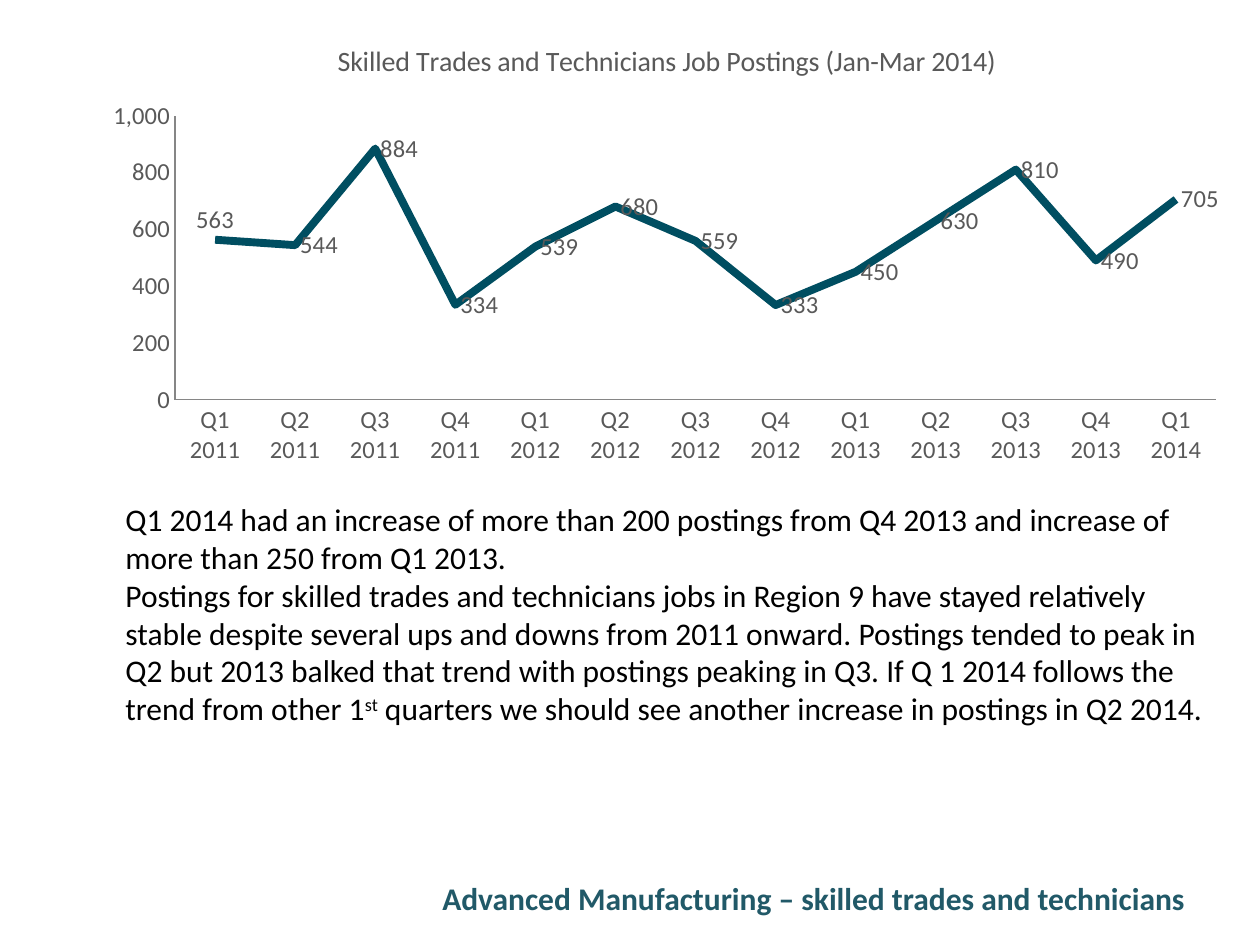
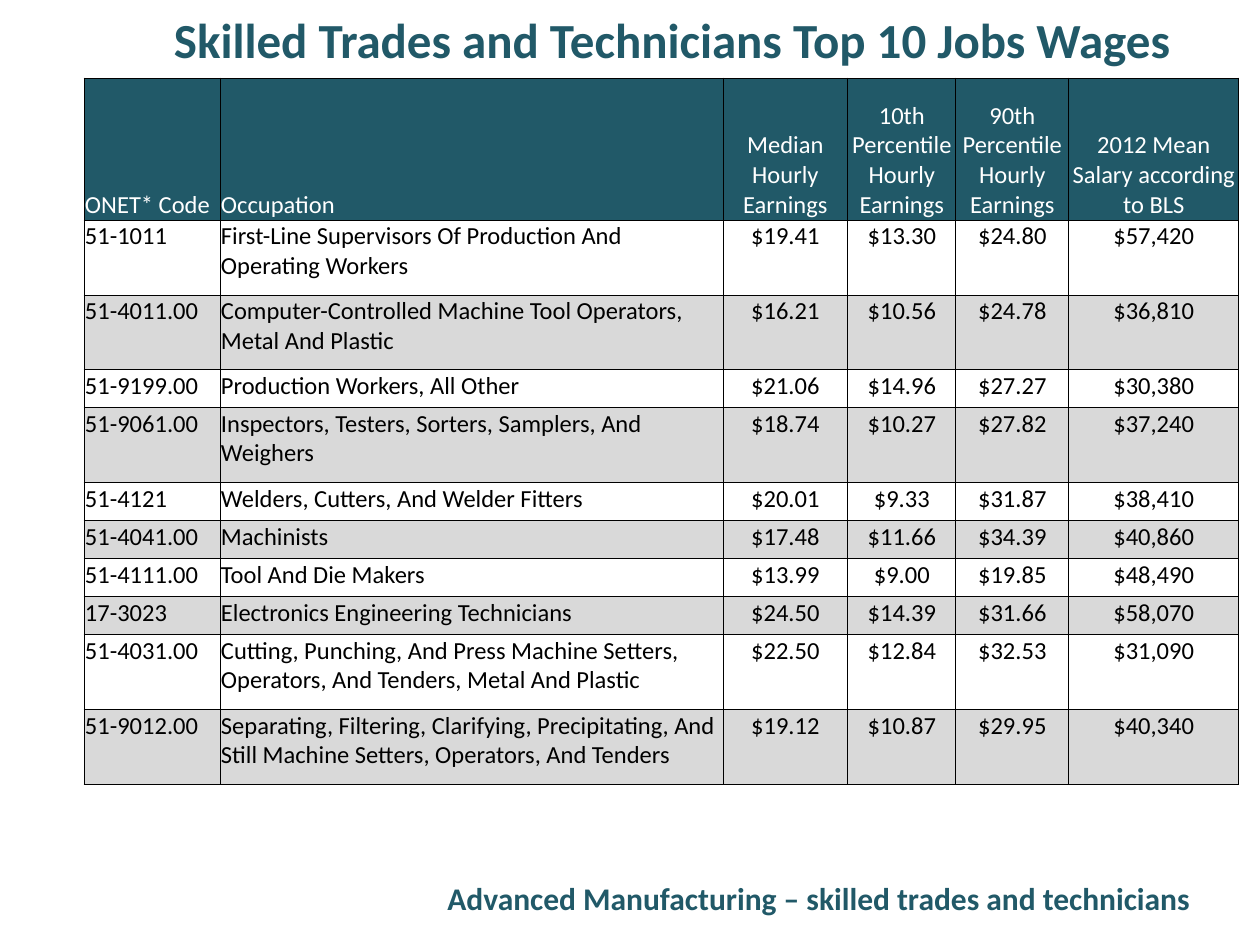
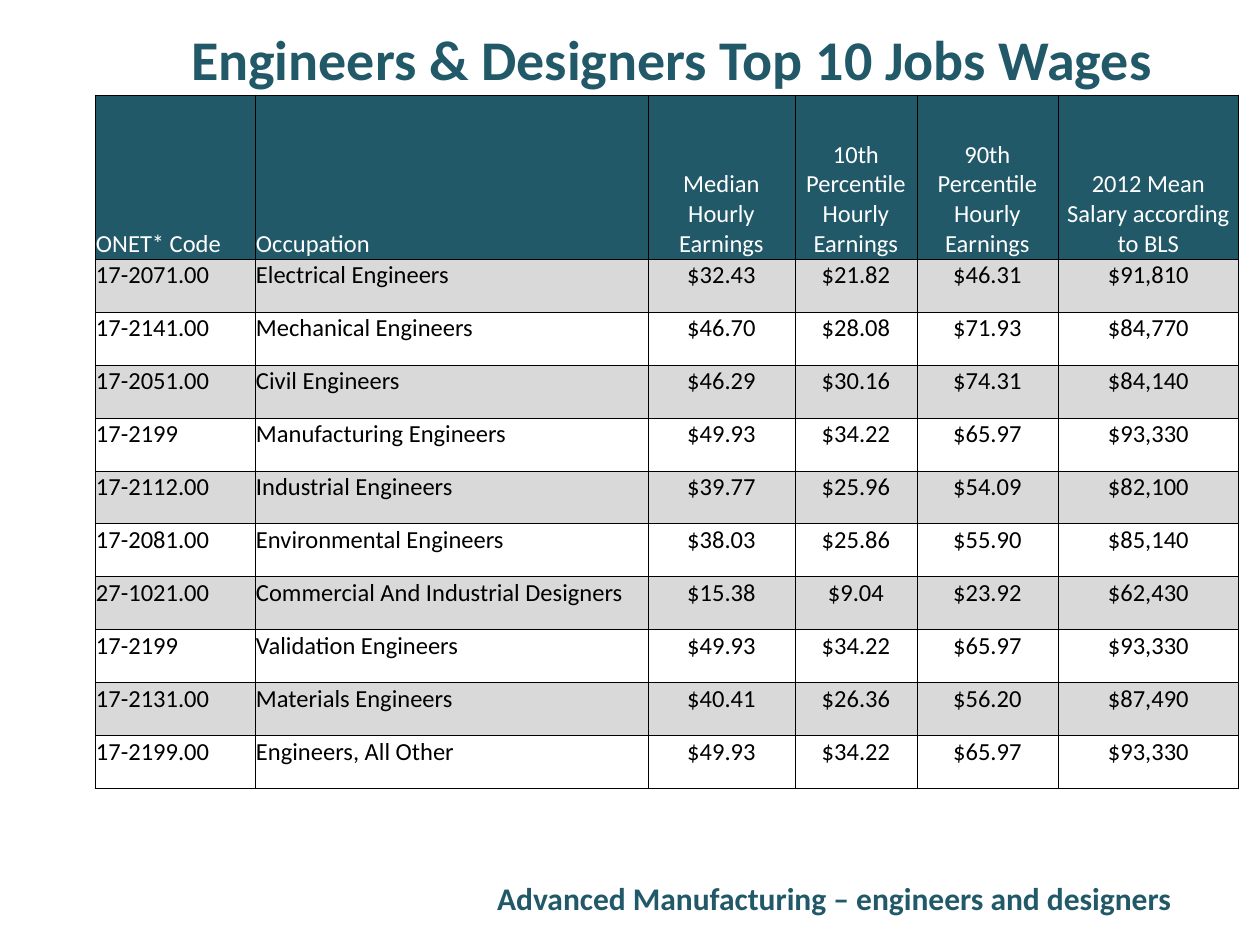
"""Build three slides on manufacturing job postings and wages."""
from lxml import etree
from pptx import Presentation
from pptx.chart.data import CategoryChartData
from pptx.dml.color import RGBColor
from pptx.enum.chart import XL_CHART_TYPE, XL_LABEL_POSITION, XL_MARKER_STYLE, XL_TICK_MARK
from pptx.enum.text import MSO_ANCHOR, PP_ALIGN
from pptx.oxml import parse_xml
from pptx.oxml.ns import nsdecls
from pptx.util import Emu, Pt

TEAL = RGBColor(0x21, 0x59, 0x68)
LINE = RGBColor(0x00, 0x4E, 0x61)
AXIS = RGBColor(0x86, 0x86, 0x86)
GRAY = RGBColor(0x59, 0x59, 0x59)
BAND = RGBColor(0xD9, 0xD9, 0xD9)
BLACK = RGBColor(0, 0, 0)
WHITE = RGBColor(255, 255, 255)
FONT = "Calibri"
RIGHT = 1218
HEADERS = ["ONET* Code", "Occupation", "Median Hourly Earnings",
           "10th Percentile Hourly Earnings", "90th Percentile Hourly Earnings",
           "2012 Mean Salary according to BLS"]
TRADES = [
    ("51-1011", "First-Line Supervisors Of Production And Operating Workers",
     "$19.41", "$13.30", "$24.80", "$57,420"),
    ("51-4011.00", "Computer-Controlled Machine Tool Operators, Metal And Plastic",
     "$16.21", "$10.56", "$24.78", "$36,810"),
    ("51-9199.00", "Production Workers, All Other", "$21.06", "$14.96", "$27.27", "$30,380"),
    ("51-9061.00", "Inspectors, Testers, Sorters, Samplers, And Weighers",
     "$18.74", "$10.27", "$27.82", "$37,240"),
    ("51-4121", "Welders, Cutters, And Welder Fitters", "$20.01", "$9.33", "$31.87", "$38,410"),
    ("51-4041.00", "Machinists", "$17.48", "$11.66", "$34.39", "$40,860"),
    ("51-4111.00", "Tool And Die Makers", "$13.99", "$9.00", "$19.85", "$48,490"),
    ("17-3023", "Electronics Engineering Technicians", "$24.50", "$14.39", "$31.66", "$58,070"),
    ("51-4031.00", "Cutting, Punching, And Press Machine Setters, Operators, And Tenders, "
     "Metal And Plastic", "$22.50", "$12.84", "$32.53", "$31,090"),
    ("51-9012.00", "Separating, Filtering, Clarifying, Precipitating, And Still Machine Setters, "
     "Operators, And Tenders", "$19.12", "$10.87", "$29.95", "$40,340"),
]
ENGINEERS = [
    ("17-2071.00", "Electrical Engineers", "$32.43", "$21.82", "$46.31", "$91,810"),
    ("17-2141.00", "Mechanical Engineers", "$46.70", "$28.08", "$71.93", "$84,770"),
    ("17-2051.00", "Civil Engineers", "$46.29", "$30.16", "$74.31", "$84,140"),
    ("17-2199", "Manufacturing Engineers", "$49.93", "$34.22", "$65.97", "$93,330"),
    ("17-2112.00", "Industrial Engineers", "$39.77", "$25.96", "$54.09", "$82,100"),
    ("17-2081.00", "Environmental Engineers", "$38.03", "$25.86", "$55.90", "$85,140"),
    ("27-1021.00", "Commercial And Industrial Designers", "$15.38", "$9.04", "$23.92", "$62,430"),
    ("17-2199", "Validation Engineers", "$49.93", "$34.22", "$65.97", "$93,330"),
    ("17-2131.00", "Materials Engineers", "$40.41", "$26.36", "$56.20", "$87,490"),
    ("17-2199.00", "Engineers, All Other", "$49.93", "$34.22", "$65.97", "$93,330"),
]
WAGES = [
    dict(title="Skilled Trades and Technicians Top 10 Jobs Wages", size=28, title_h=78,
         left=84, top=78, cols=[136, 503, 125, 108, 113, 170],
         heights=[142, 75, 75, 38, 75, 38, 38, 38, 38, 75, 75], rows=TRADES, band=0),
    dict(title="Engineers & Designers Top 10 Jobs Wages", size=32, title_h=116,
         left=95, top=95, cols=[160, 393, 147, 122, 141, 181],
         heights=[164] + [53] * 10, rows=ENGINEERS, band=1),
]
FOOTERS = [(410, "skilled trades and technicians"), (420, "skilled trades and technicians"),
           (451, "engineers and designers")]


def px(n):
    return Emu(round(n * 914400 / 126))


def style(p, size, color, bold=False, align=PP_ALIGN.LEFT):
    p.alignment = align
    p.font.name, p.font.size, p.font.bold = FONT, Pt(size), bold
    p.font.color.rgb = color


prs = Presentation()
prs.slide_width, prs.slide_height = px(1260), px(945)

s = prs.slides.add_slide(prs.slide_layouts[6])
tf = s.shapes.add_textbox(px(113), px(494), px(1105), px(280)).text_frame
tf.word_wrap = True
tf.text = ("Q1 2014 had an increase of more than 200 postings from Q4 2013 and increase of "
           "more than 250 from Q1 2013.")
p = tf.add_paragraph()
p.add_run().text = ("Postings for skilled trades and technicians jobs in Region 9 have stayed "
                    "relatively stable despite several ups and downs from 2011 onward. Postings "
                    "tended to peak in Q2 but 2013 balked that trend with postings peaking in Q3. "
                    "If Q 1 2014 follows the trend from other 1")
r = p.add_run()
r.text = "st"
r._r.get_or_add_rPr().set("baseline", "30000")
p.add_run().text = " quarters we should see another increase in postings in Q2 2014."
for p in tf.paragraphs:
    style(p, 18, BLACK)

data = CategoryChartData(number_format="#,##0")
data.categories = [f"Q{i % 4 + 1} {2011 + i // 4}" for i in range(13)]
data.add_series("Series 1", [563, 544, 884, 334, 539, 680, 559, 333, 450, 630, 810, 490, 705])
chart = s.shapes.add_chart(XL_CHART_TYPE.LINE, px(95), px(21), px(1144), px(451), data).chart
chart.font.name, chart.font.size, chart.font.color.rgb = FONT, Pt(14), GRAY
chart.has_legend = False
chart.has_title = True
tf = chart.chart_title.text_frame
tf.text = "Skilled Trades and Technicians Job Postings (Jan-Mar 2014)"
style(tf.paragraphs[0], 16, GRAY, align=PP_ALIGN.CENTER)
for axis in (chart.category_axis, chart.value_axis):
    axis.has_major_gridlines = False
    axis.major_tick_mark = axis.minor_tick_mark = XL_TICK_MARK.NONE
    axis.format.line.color.rgb = AXIS
axis.minimum_scale, axis.maximum_scale, axis.major_unit = 0, 1000, 200
axis.tick_labels.number_format = "#,##0"
axis.tick_labels.number_format_is_linked = False
plot = chart.plots[0]
plot.vary_by_categories = False
series = plot.series[0]
series.smooth = False
series.marker.style = XL_MARKER_STYLE.NONE
series.format.line.color.rgb, series.format.line.width = LINE, Pt(4.5)
labels = series.data_labels
labels.show_value = True
labels.number_format, labels.number_format_is_linked = "#,##0", False
labels.position = XL_LABEL_POSITION.RIGHT
series.points[0].data_label.position = XL_LABEL_POSITION.ABOVE
area = chart._chartSpace.chart.plotArea
for old in area.findall("{*}layout"):
    area.remove(old)
area.insert(0, parse_xml(
    f'<c:layout {nsdecls("c")}><c:manualLayout><c:layoutTarget val="inner"/>'
    '<c:xMode val="edge"/><c:yMode val="edge"/><c:x val="0.07"/><c:y val="0.21"/>'
    '<c:w val="0.91"/><c:h val="0.63"/></c:manualLayout></c:layout>'))

for w in WAGES:
    s = prs.slides.add_slide(prs.slide_layouts[5])
    title = s.shapes.title
    title.left, title.top, title.width, title.height = px(84), px(0), px(1176), px(w["title_h"])
    title.text_frame.text = w["title"]
    title.text_frame.vertical_anchor = MSO_ANCHOR.MIDDLE
    style(title.text_frame.paragraphs[0], w["size"], TEAL, True, PP_ALIGN.CENTER)

    table = s.shapes.add_table(11, 6, px(w["left"]), px(w["top"]),
                               px(sum(w["cols"])), px(sum(w["heights"]))).table
    table.first_row = table.horz_banding = False
    for col, width in zip(table.columns, w["cols"]):
        col.width = px(width)
    for i, (row, height, texts) in enumerate(zip(table.rows, w["heights"], [HEADERS] + w["rows"])):
        row.height = px(height)
        for j, (cell, text) in enumerate(zip(row.cells, texts)):
            cell.text = text
            cell.margin_left = cell.margin_right = cell.margin_top = px(1)
            cell.margin_bottom = 0
            cell.vertical_anchor = MSO_ANCHOR.TOP if i else MSO_ANCHOR.BOTTOM
            style(cell.text_frame.paragraphs[0], 14, BLACK if i else WHITE,
                  align=PP_ALIGN.CENTER if j > 1 else PP_ALIGN.LEFT)
            for side in "LRTB":
                etree.SubElement(cell._tc.get_or_add_tcPr(), "dummy").getparent().replace(
                    cell._tc.tcPr[-1], parse_xml(
                        f'<a:ln{side} {nsdecls("a")} w="6350"><a:solidFill>'
                        f'<a:srgbClr val="{BLACK}"/></a:solidFill></a:ln{side}>'))
            if i == 0 or i % 2 == w["band"]:
                cell.fill.solid()
                cell.fill.fore_color.rgb = BAND if i else TEAL
            else:
                cell.fill.background()

for s, (left, topic) in zip(prs.slides, FOOTERS):
    tf = s.shapes.add_textbox(px(left), px(864), px(RIGHT - left), px(67)).text_frame
    tf.word_wrap = True
    tf.vertical_anchor = MSO_ANCHOR.MIDDLE
    tf.text = f"Advanced Manufacturing – {topic}"
    style(tf.paragraphs[0], 18, TEAL, True, PP_ALIGN.CENTER)

prs.save("out.pptx")
